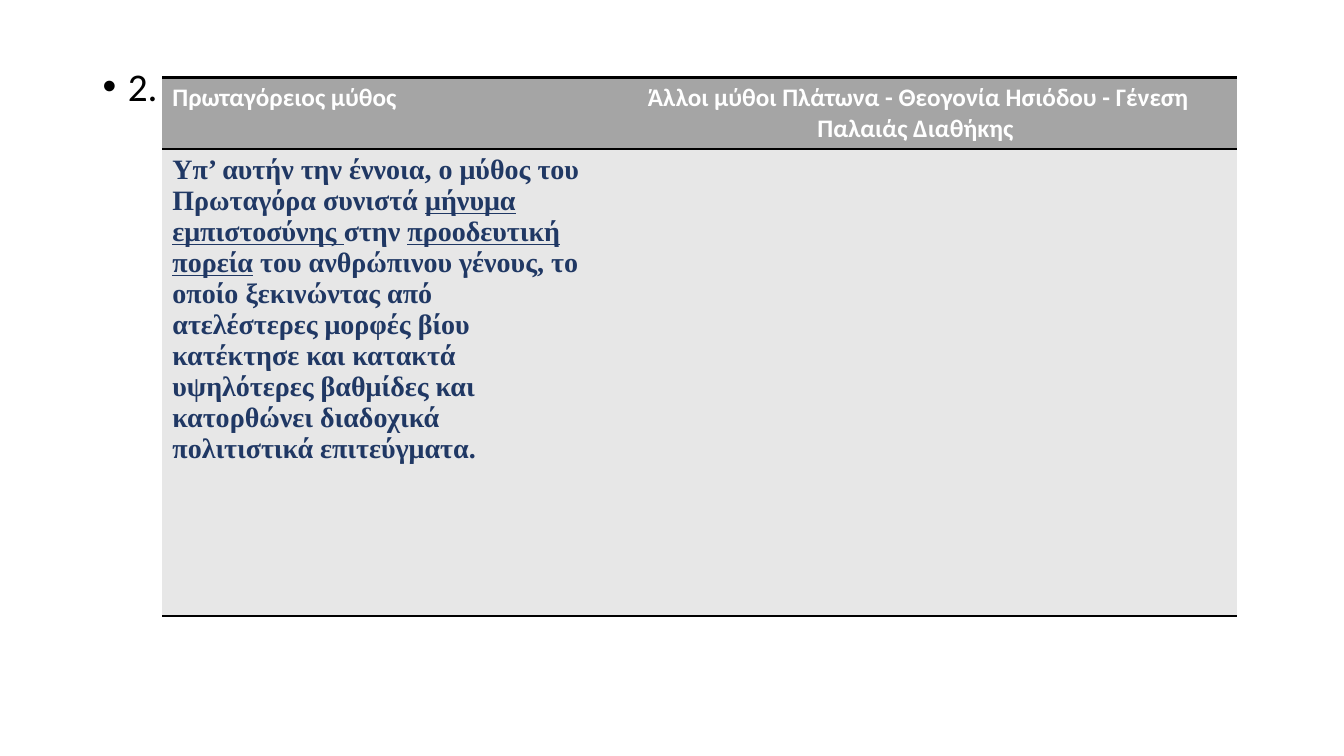
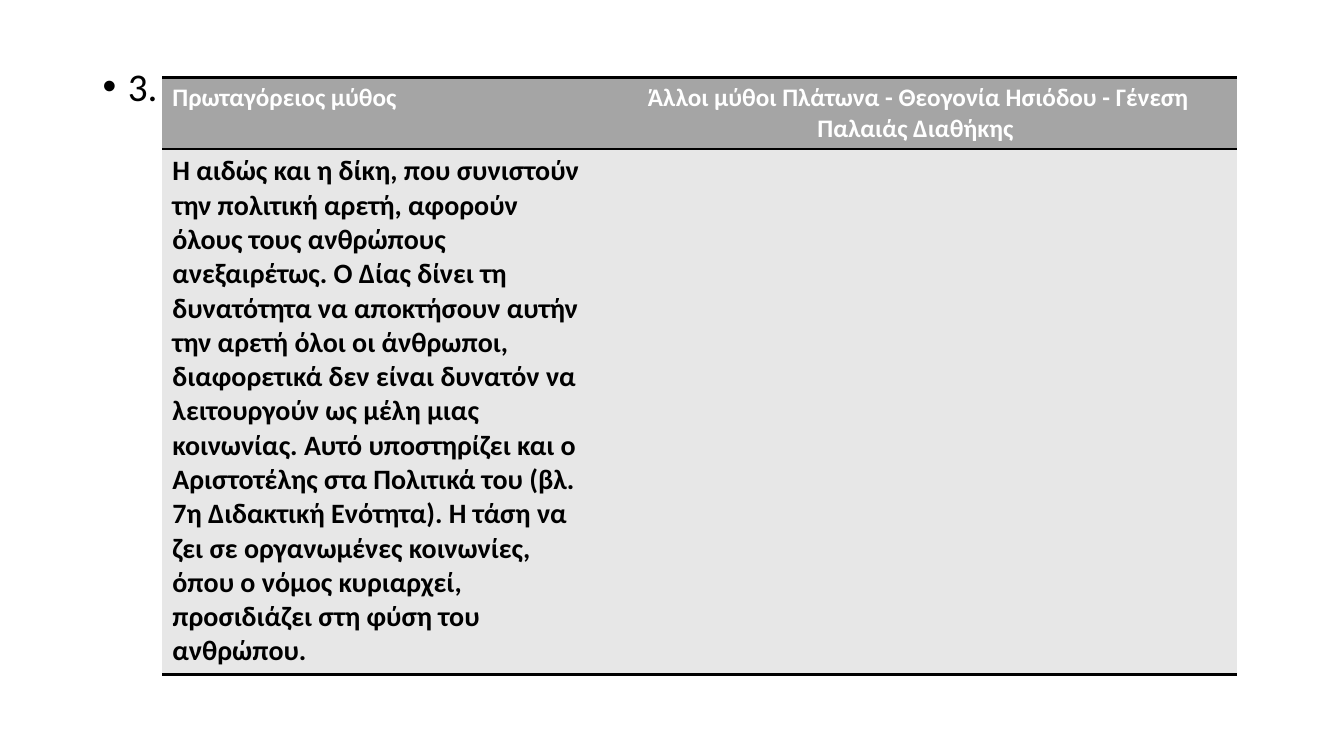
import pptx
import pptx.util
import pptx.oxml
import pptx.dml.color
import pptx.enum.text
from dataclasses import dataclass
from lxml import etree
from pptx.util import Inches

A = "http://schemas.openxmlformats.org/drawingml/2006/main"
PLAIN_TABLE = "{2D5ABB26-0587-4C30-8999-92F81FD0307C}"


@dataclass(frozen=True)
class Theme:
    black: str = "000000"
    white: str = "FFFFFF"
    navy: str = "203864"
    header_fill: str = "A5A5A5"
    body_fill: str = "E7E7E7"
    sans: str = "Calibri"
    serif: str = "Times New Roman"
    number_size: int = 28
    header_size: int = 18
    body_size: int = 20
    rule: int = 2


class Deck:
    def __init__(self, theme):
        self.t = theme
        self.prs = pptx.Presentation()
        self.prs.slide_width = Inches(13.33)
        self.prs.slide_height = Inches(7.5)
        self.s = None

    def slide(self):
        self.s = self.prs.slides.add_slide(self.prs.slide_layouts[6])

    def run(self, p, text, size, color, font=None, bold=True, underline=False):
        r = p.add_run()
        r.text = text
        r.font.name = font or self.t.sans
        r.font.size = pptx.util.Pt(size)
        r.font.bold = bold
        r.font.underline = underline
        r.font.color.rgb = pptx.dml.color.RGBColor.from_string(color)

    def number(self, text):
        sp = self.s.shapes.add_textbox(Inches(0.92), Inches(0.62), Inches(11.5), Inches(5.43))
        tf = sp.text_frame
        tf.word_wrap = True
        p = tf.paragraphs[0]
        p.line_spacing = 0.9
        p.space_before = pptx.util.Pt(10)
        pPr = p._p.get_or_add_pPr()
        pPr.set("marL", str(Inches(0.25)))
        pPr.set("indent", str(-Inches(0.25)))
        etree.SubElement(pPr, f"{{{A}}}buFont", typeface="Arial")
        etree.SubElement(pPr, f"{{{A}}}buChar", char="•")
        self.run(p, text, self.t.number_size, self.t.black, bold=False)

    def cell(self, cell, fill, edges):
        tcPr = cell._tc.get_or_add_tcPr()
        for edge in edges:
            tcPr.append(pptx.oxml.parse_xml(
                f'<a:{edge} xmlns:a="{A}" w="{pptx.util.Pt(self.t.rule)}"><a:solidFill>'
                f'<a:srgbClr val="{self.t.black}"/></a:solidFill></a:{edge}>'))
        cell.fill.solid()
        cell.fill.fore_color.rgb = pptx.dml.color.RGBColor.from_string(fill)

    def table(self, headers, body, color, font, body_height):
        widths, heights = (4.28, 6.38), (0.71, body_height)
        tbl = self.s.shapes.add_table(2, 2, Inches(1.61), Inches(0.77),
                                      Inches(sum(widths)), Inches(sum(heights))).table
        tbl.horz_banding = False
        tbl._tbl.tblPr.find(f"{{{A}}}tableStyleId").text = PLAIN_TABLE
        for row, height in zip(tbl.rows, heights):
            row.height = Inches(height)
        for i, (width, header) in enumerate(zip(widths, headers)):
            tbl.columns[i].width = Inches(width)
            self.cell(tbl.cell(0, i), self.t.header_fill, ("lnT", "lnB"))
            self.cell(tbl.cell(1, i), self.t.body_fill, ("lnT", "lnB"))
            p = tbl.cell(0, i).text_frame.paragraphs[0]
            self.run(p, header, self.t.header_size, self.t.white)
        p.alignment = pptx.enum.text.PP_ALIGN.CENTER
        p = tbl.cell(1, 0).text_frame.paragraphs[0]
        for text, underline in body:
            self.run(p, text, self.t.body_size, color, font, underline=underline)


HEADERS = ("Πρωταγόρειος μύθος",
           " Άλλοι μύθοι Πλάτωνα - Θεογονία Ησιόδου - Γένεση Παλαιάς Διαθήκης")

PROGRESS = (
    ("Υπ’ αυτήν την έννοια, ο μύθος του Πρωταγόρα συνιστά ", False),
    ("μήνυμα εμπιστοσύνης ", True),
    ("στην ", False),
    ("προοδευτική πορεία", True),
    (" του ανθρώπινου γένους, το οποίο ξεκινώντας από ατελέστερες μορφές βίου "
     "κατέκτησε και κατακτά υψηλότερες βαθμίδες και κατορθώνει διαδοχικά "
     "πολιτιστικά επιτεύγματα.", False),
)

VIRTUE = (
    ("Η αιδώς και η δίκη, που συνιστούν την πολιτική αρετή, αφορούν όλους τους "
     "ανθρώπους ανεξαιρέτως. Ο Δίας δίνει τη δυνατότητα να αποκτήσουν αυτήν την "
     "αρετή όλοι οι άνθρωποι, διαφορετικά δεν είναι δυνατόν να λειτουργούν ως μέλη "
     "μιας κοινωνίας. Αυτό υποστηρίζει και ο Αριστοτέλης στα Πολιτικά του (βλ. 7η "
     "Διδακτική Ενότητα). Η τάση να ζει σε οργανωμένες κοινωνίες, όπου ο νόμος "
     "κυριαρχεί, προσιδιάζει στη φύση του ανθρώπου.", False),
)


def main():
    theme = Theme()
    deck = Deck(theme)
    for number, body, color, font, body_height in (
            ("2.", PROGRESS, theme.navy, theme.serif, 4.63),
            ("3.", VIRTUE, theme.black, theme.sans, 5.21)):
        deck.slide()
        deck.number(number)
        deck.table(HEADERS, body, color, font, body_height)
    deck.prs.save("out.pptx")


if __name__ == "__main__":
    main()
